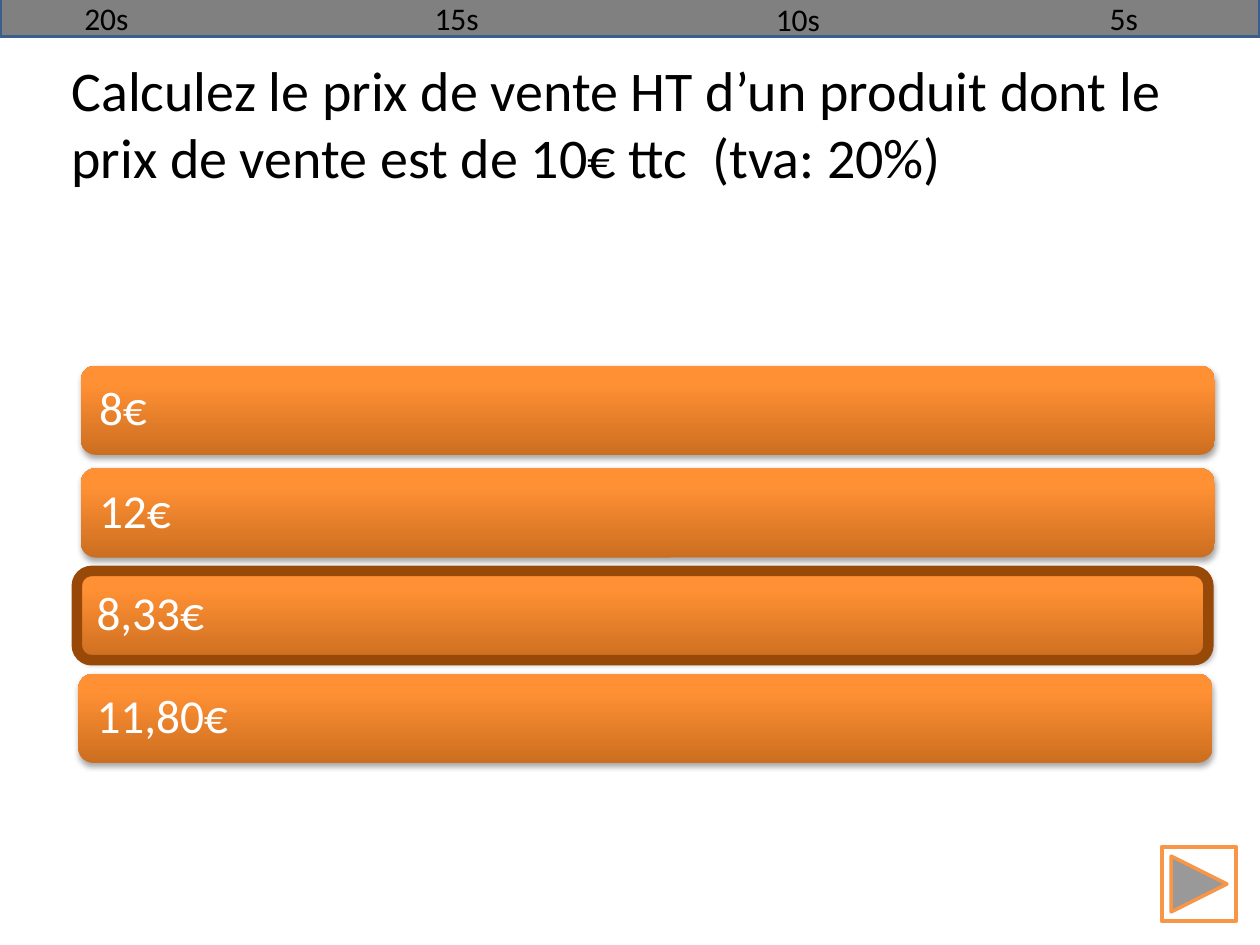
from copy import deepcopy

from lxml import etree
from pptx import Presentation
from pptx.dml.color import RGBColor
from pptx.enum.shapes import MSO_SHAPE
from pptx.enum.text import MSO_ANCHOR, MSO_AUTO_SIZE, PP_ALIGN
from pptx.oxml.ns import qn
from pptx.util import Cm, Pt

RECT = MSO_SHAPE.RECTANGLE
ROUNDED = MSO_SHAPE.ROUNDED_RECTANGLE
BACK_BUTTON = MSO_SHAPE.ACTION_BUTTON_BACK_OR_PREVIOUS
MIDDLE = MSO_ANCHOR.MIDDLE
LEFT = PP_ALIGN.LEFT
GROW = MSO_AUTO_SIZE.SHAPE_TO_FIT_TEXT

QUESTION = ("Calculez le prix de vente HT d’un produit dont le "
            "prix de vente est de 10€ ttc  (tva: 20%)")
# answer, left edge in cm
ANSWERS = [("8€", 1.63), ("12€", 1.63), ("8,33€", 1.58), ("11,80€", 1.58)]
# label, left, top, width in cm
TIMER_LABELS = [("5s", 22.12, -0.15, 1.19), ("10s", 15.39, -0.13, 1.6),
                ("15s", 8.51, -0.15, 1.6), ("20s", 1.45, -0.15, 1.6)]
ANSWER_TOP, ANSWER_PITCH = 7.37, 2.07
ANSWER_WIDTH, ANSWER_HEIGHT = 22.86, 1.8
CORRECT = 2


def rgb(code):
    return RGBColor.from_string(code)


class QuizPage:
    font = "Calibri"
    black, white = "000000", "FFFFFF"
    gradient = [(0, "CC6E20"), (0.8, "FF9034"), (1, "FF9136")]

    def __init__(self, page):
        self.page = page

    def add_span(self, para, words, size, color):
        span = para.add_run()
        span.text = words
        span.font.name = self.font
        span.font.size = Pt(size)
        span.font.color.rgb = rgb(color)

    def text(self, words, left, top, width, height, size, wrap=True):
        box = self.page.shapes.add_textbox(Cm(left), Cm(top), Cm(width), Cm(height))
        box.text_frame.word_wrap = wrap
        if not wrap:
            box.text_frame.auto_size = GROW
        self.add_span(box.text_frame.paragraphs[0], words, size, self.black)

    def shape(self, kind, left, top, width, height, fill=None, line=None, weight=2):
        shape = self.page.shapes.add_shape(kind, Cm(left), Cm(top), Cm(width), Cm(height))
        shape.shadow.inherit = False
        if fill:
            shape.fill.solid()
            shape.fill.fore_color.rgb = rgb(fill)
        else:
            shape.fill.background()
        if line:
            shape.line.color.rgb = rgb(line)
            shape.line.width = Pt(weight)
        else:
            shape.line.fill.background()
        return shape

    def shade(self, shape):
        """Give the shape the upward three-stop gradient."""
        shape.fill.gradient()
        shape.fill.gradient_angle = 90
        stop_list = shape._element.spPr.find(qn("a:gradFill")).find(qn("a:gsLst"))
        stop_list.append(deepcopy(stop_list[-1]))
        for stop, (position, color) in zip(shape.fill.gradient_stops, self.gradient):
            stop.position = position
            stop.color.rgb = rgb(color)

    def drop_shadow(self, shape):
        effects = shape._element.spPr.find(qn("a:effectLst"))
        shadow = etree.SubElement(effects, qn("a:outerShdw"), blurRad=str(Pt(3.1)),
                                  dist=str(Pt(1.8)), dir="5400000", rotWithShape="0")
        color = etree.SubElement(shadow, qn("a:srgbClr"), val=self.black)
        etree.SubElement(color, qn("a:alpha"), val="35000")

    def answer(self, words, left, top):
        bar = self.shape(ROUNDED, left, top, ANSWER_WIDTH, ANSWER_HEIGHT)
        self.shade(bar)
        self.drop_shadow(bar)
        frame = bar.text_frame
        frame.word_wrap = True
        frame.vertical_anchor = MIDDLE
        frame.margin_left = frame.margin_right = Cm(0.28)
        para = frame.paragraphs[0]
        para.alignment = LEFT
        para.line_spacing = 0.9
        self.add_span(para, words, 27, self.white)


def main():
    deck = Presentation()
    deck.slide_width, deck.slide_height = Cm(25.4), Cm(19.05)
    quiz = QuizPage(deck.slides.add_slide(deck.slide_layouts[6]))

    quiz.text(QUESTION, 1.19, 0.99, 22.86, 3.1, 32)

    for row, (words, left) in enumerate(ANSWERS):
        quiz.answer(words, left, ANSWER_TOP + row * ANSWER_PITCH)
    quiz.shape(ROUNDED, 1.55, ANSWER_TOP + CORRECT * ANSWER_PITCH, 22.81,
               ANSWER_HEIGHT, line="984807", weight=6)

    button = quiz.shape(BACK_BUTTON, 23.42, 17.07, 1.5, 1.5,
                        fill=quiz.white, line="F79646")
    button.rotation = 180

    quiz.shape(RECT, 0, -0.05, 25.4, 0.79, fill="808080", line="3A5F8C")
    for words, left, top, width in TIMER_LABELS:
        quiz.text(words, left, top, width, 1.02, 18, wrap=False)

    deck.save("out.pptx")


if __name__ == "__main__":
    main()
